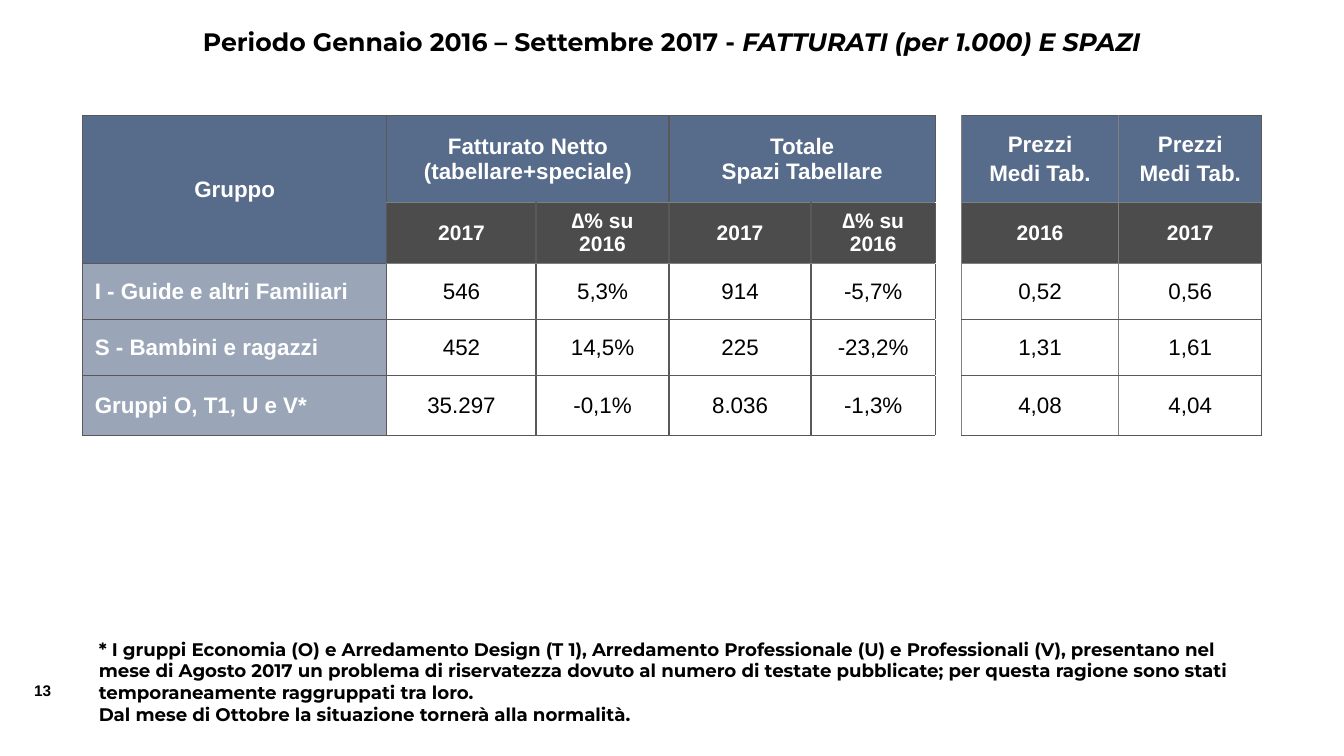
from lxml import etree
from pptx import Presentation
from pptx.dml.color import RGBColor
from pptx.enum.text import MSO_ANCHOR, MSO_AUTO_SIZE, PP_ALIGN
from pptx.oxml.ns import qn
from pptx.util import Cm, Pt

CENTER, LEFT = PP_ALIGN.CENTER, PP_ALIGN.LEFT
MIDDLE, TOP = MSO_ANCHOR.MIDDLE, MSO_ANCHOR.TOP
NO_AUTOFIT = MSO_AUTO_SIZE.NONE
TITLE_ONLY = 5

BLACK = RGBColor(0x00, 0x00, 0x00)
WHITE = RGBColor(0xFF, 0xFF, 0xFF)
BLUE = RGBColor(0x57, 0x6B, 0x8A)
DARK_LINE = RGBColor(0x59, 0x59, 0x59)
GREY_LINE = RGBColor(0x80, 0x80, 0x80)

TITLE = ("Periodo Gennaio 2016 – Settembre 2017 - ", "FATTURATI (per 1.000) E SPAZI")
FOOTNOTE = (
    "* I gruppi Economia (O) e Arredamento Design (T 1), Arredamento Professionale (U) "
    "e Professionali (V), presentano nel mese di Agosto 2017 un problema di riservatezza "
    "dovuto al numero di testate pubblicate; per questa ragione sono stati "
    "temporaneamente raggruppati tra loro.",
    "Dal mese di Ottobre la situazione tornerà alla normalità.",
)
COLUMN_WIDTHS = (7.67, 3.76, 3.35, 3.58, 3.13, 0.66, 3.96, 3.61)
ROW_HEIGHTS = (2.18, 1.53, 1.42, 1.42, 1.5)
GAP_COLUMN = 5
PRICES = "Prezzi\nMedi Tab."
ROWS = (
    ("Gruppo", "Fatturato Netto (tabellare+speciale)", "", "Totale\nSpazi Tabellare", "",
     "", PRICES, PRICES),
    ("", "2017", "∆% su 2016", "2017", "∆% su 2016", "", "2016", "2017"),
    ("I - Guide e altri Familiari", "546", "5,3%", "914", "-5,7%", "", "0,52", "0,56"),
    ("S - Bambini e ragazzi", "452", "14,5%", "225", "-23,2%", "", "1,31", "1,61"),
    ("Gruppi O, T1, U e V*", "35.297", "-0,1%", "8.036", "-1,3%", "", "4,08", "4,04"),
)
MERGES = (((0, 0), (1, 0)), ((0, 1), (0, 2)), ((0, 3), (0, 4)))


class SlideBuilder:
    heading_font = "Montserrat"
    body_font = "Arial"

    def __init__(self, deck):
        self.page = deck.slides.add_slide(deck.slide_layouts[TITLE_ONLY])

    def style(self, paragraph, font, size, color=BLACK, bold=True, align=LEFT):
        paragraph.alignment = align
        paragraph.font.name = font
        paragraph.font.size = Pt(size)
        paragraph.font.bold = bold
        paragraph.font.color.rgb = color

    def title(self, plain, italic, left, top, width, height):
        box = self.page.shapes.title
        box.left, box.top, box.width, box.height = map(Cm, (left, top, width, height))
        box.text_frame.auto_size = NO_AUTOFIT
        box.text_frame.vertical_anchor = MIDDLE
        paragraph = box.text_frame.paragraphs[0]
        paragraph.add_run().text = plain
        span = paragraph.add_run()
        span.text = italic
        span.font.italic = True
        self.style(paragraph, self.heading_font, 18, align=CENTER)

    def text(self, lines, left, top, width, height, font, size, wrap=True):
        box = self.page.shapes.add_textbox(*map(Cm, (left, top, width, height)))
        frame = box.text_frame
        frame.word_wrap = wrap
        frame.vertical_anchor = TOP
        frame.text = "\n".join(lines)
        for paragraph in frame.paragraphs:
            self.style(paragraph, font, size)

    def border(self, cell, side, color):
        line = etree.SubElement(cell._tc.get_or_add_tcPr(), qn("a:ln" + side), w=str(Pt(1)))
        fill = etree.SubElement(line, qn("a:solidFill"))
        etree.SubElement(fill, qn("a:srgbClr"), val=str(color))

    def fill(self, cell, color, opacity=100):
        if color is None:
            cell.fill.background()
            return
        cell.fill.solid()
        cell.fill.fore_color.rgb = color
        if opacity < 100:
            tone = cell._tc.tcPr.find(".//" + qn("a:solidFill") + "[last()]")
            tone = cell._tc.tcPr.find(qn("a:solidFill")).find(qn("a:srgbClr"))
            etree.SubElement(tone, qn("a:alpha"), val=str(opacity * 1000))

    def cell_borders(self, cell, row, column):
        def vertical(edge):
            return GREY_LINE if edge in (GAP_COLUMN + 1, GAP_COLUMN + 2) else DARK_LINE

        def horizontal(edge):
            if column == GAP_COLUMN:
                return WHITE
            return GREY_LINE if edge in (1, 2) and column else DARK_LINE

        self.border(cell, "L", vertical(column))
        self.border(cell, "R", vertical(column + 1))
        self.border(cell, "T", horizontal(row))
        self.border(cell, "B", horizontal(row + 1))

    def cell_fill(self, cell, row, column):
        if column == GAP_COLUMN:
            self.fill(cell, WHITE)
        elif row == 0 or (row == 1 and column == 0):
            self.fill(cell, BLUE)
        elif row == 1:
            self.fill(cell, BLACK, 70)
        elif column == 0:
            self.fill(cell, BLUE, 60)
        else:
            self.fill(cell, None)

    def cell_text(self, cell, row, column, words):
        header, label = row < 2, row >= 2 and column == 0
        cell.vertical_anchor = MIDDLE
        if not header:
            cell.margin_left = Cm(0.31 if label else 0)
            cell.margin_right = cell.margin_top = cell.margin_bottom = Cm(0)
        if not words:
            return
        cell.text = words
        for paragraph in cell.text_frame.paragraphs:
            self.style(paragraph, self.body_font, 15 if row == 1 else 16,
                       WHITE if header or label else BLACK,
                       header or label, LEFT if label else CENTER)
        if words == PRICES:
            cell.text_frame.paragraphs[1].space_before = Pt(3)

    def table(self, left, top):
        frame = self.page.shapes.add_table(
            len(ROWS), len(COLUMN_WIDTHS), Cm(left), Cm(top),
            Cm(sum(COLUMN_WIDTHS)), Cm(sum(ROW_HEIGHTS)))
        table = frame.table
        table.first_row = table.horz_banding = False
        for column, width in zip(table.columns, COLUMN_WIDTHS):
            column.width = Cm(width)
        for row, height in zip(table.rows, ROW_HEIGHTS):
            row.height = Cm(height)
        for first, last in MERGES:
            table.cell(*first).merge(table.cell(*last))
        for row, entries in enumerate(ROWS):
            for column, words in enumerate(entries):
                cell = table.cell(row, column)
                self.cell_borders(cell, row, column)
                self.cell_fill(cell, row, column)
                self.cell_text(cell, row, column, words)


def main():
    deck = Presentation()
    deck.slide_width, deck.slide_height = Cm(33.87), Cm(19.05)
    slide = SlideBuilder(deck)

    # Heading
    slide.title(*TITLE, 3.86, 0.53, 26.14, 1.02)

    # Revenue, space and price table
    slide.table(2.08, 2.92)

    # Footnote and page number
    slide.text(FOOTNOTE, 2.24, 15.95, 29.41, 2.49, slide.heading_font, 13)
    slide.text(["13"], 0.61, 17.04, 1.07, 0.74, slide.body_font, 11, wrap=False)

    deck.save("out.pptx")


if __name__ == "__main__":
    main()
